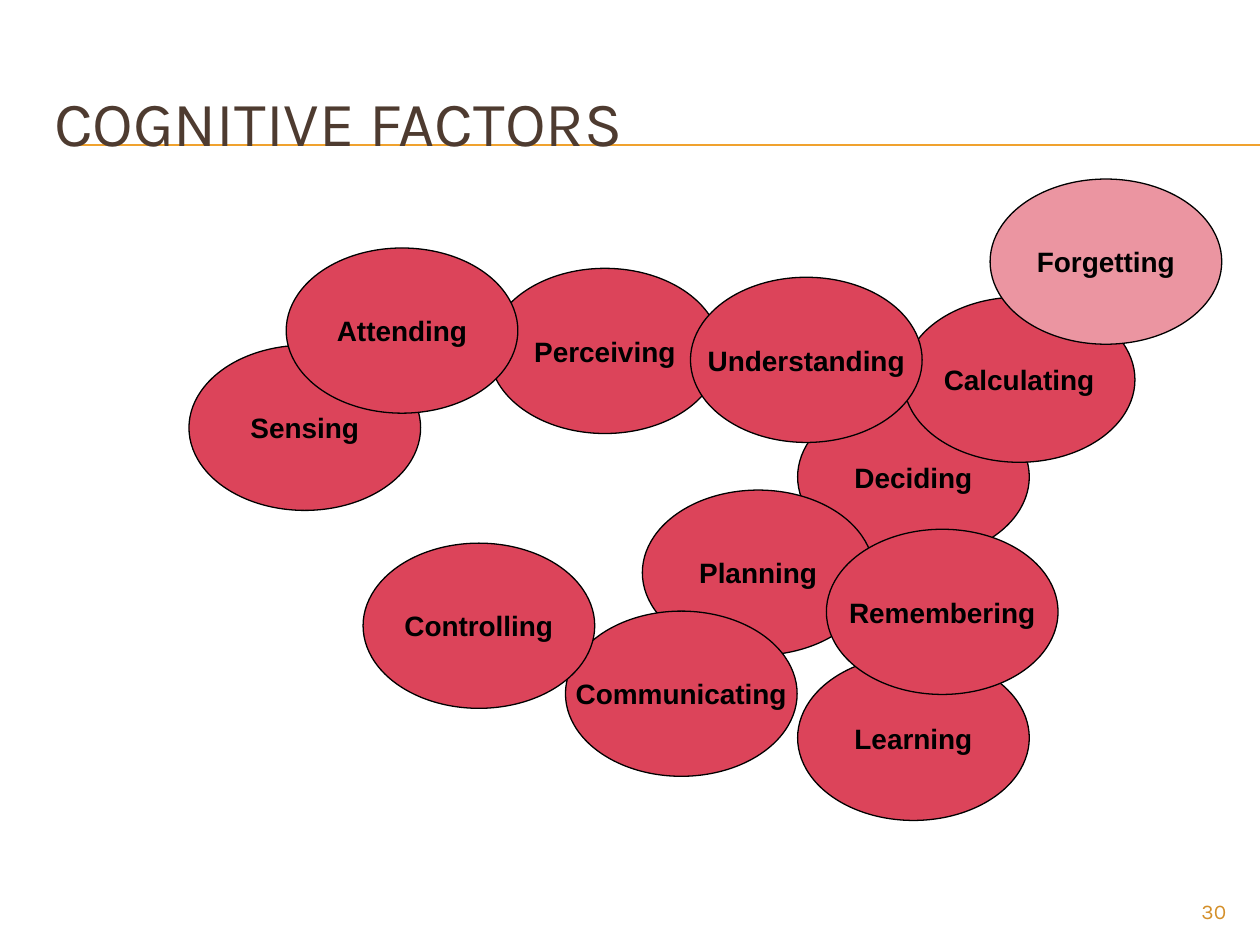
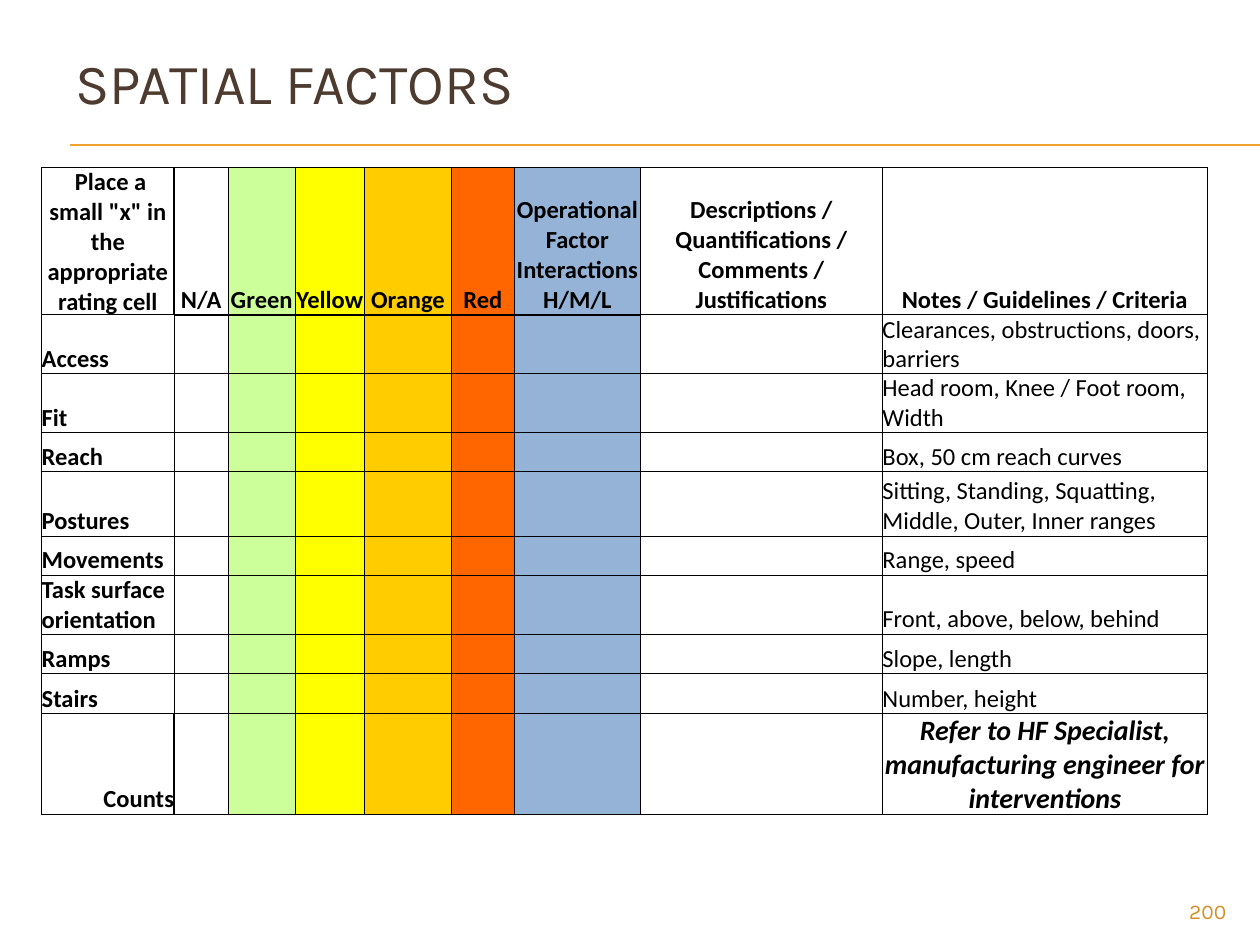
from lxml import etree
from pptx import Presentation
from pptx.dml.color import RGBColor
from pptx.enum.shapes import MSO_CONNECTOR, MSO_SHAPE
from pptx.enum.text import MSO_ANCHOR, PP_ALIGN
from pptx.oxml.ns import qn
from pptx.util import Cm, Pt

OVAL = MSO_SHAPE.OVAL
STRAIGHT = MSO_CONNECTOR.STRAIGHT
MIDDLE, BOTTOM = MSO_ANCHOR.MIDDLE, MSO_ANCHOR.BOTTOM
LEFT, CENTER, RIGHT = PP_ALIGN.LEFT, PP_ALIGN.CENTER, PP_ALIGN.RIGHT

BLACK = "000000"
RULE_GOLD = "F0A22E"
TITLE_BROWN = "4E3B30"
NUMBER_GOLD = "D48F29"
FACTOR_RED = "DC445A"
FORGETTING_PINK = "EB95A1"

FACTORS = [
    ("Sensing", 3.81, 6.96),
    ("Deciding", 16.08, 7.95),
    ("Learning", 16.08, 13.21),
    ("Planning", 12.95, 9.88),
    ("Perceiving", 9.86, 5.41),
    ("Attending", 5.77, 5),
    ("Communicating", 11.4, 12.32),
    ("Controlling", 7.32, 10.95),
    ("Calculating", 18.21, 5.99),
    ("Understanding", 13.92, 5.59),
    ("Remembering", 16.66, 10.67),
    ("Forgetting", 19.96, 3.61),
]

HEADINGS = [
    ' Place a small "x" in the appropriate rating cell',
    "N/A",
    "Green",
    "Yellow",
    "Orange",
    "Red",
    "Operational Factor Interactions H/M/L",
    "Descriptions / Quantifications / Comments / Justifications",
    "Notes / Guidelines / Criteria",
]
RATINGS = [
    ("Access", "Clearances, obstructions, doors, barriers"),
    ("Fit", "Head room, Knee / Foot room, Width"),
    ("Reach", "Box, 50 cm reach curves"),
    ("Postures", "Sitting, Standing, Squatting, Middle, Outer, Inner ranges"),
    ("Movements", "Range, speed"),
    ("Task surface orientation", "Front, above, below, behind"),
    ("Ramps", "Slope, length"),
    ("Stairs", "Number, height"),
    ("Counts", "Refer to HF Specialist, manufacturing engineer for interventions"),
]
COLUMN_WIDTHS = [2.67, 1.09, 1.35, 1.4, 1.75, 1.27, 2.54, 4.88, 6.55]
ROW_HEIGHTS = [2.59, 0.74, 0.79, 0.79, 1.3, 0.79, 0.79, 0.79, 0.81, 1.47]
COLUMN_FILLS = {2: "CCFF99", 3: "FFFF00", 4: "FFCC00", 5: "FF6600", 6: "95B3D7"}
COUNTS_ROW = len(RATINGS)
NOTES_COLUMN = len(HEADINGS) - 1
THICK_ROW_EDGES = {0: 6, 1: 6, COUNTS_ROW: 5, COUNTS_ROW + 1: 5}
THICK_COLUMN_EDGES = {0: (1, 6, 7), COUNTS_ROW: (1,)}


def color(hex_string):
    return RGBColor.from_string(hex_string)


def border_width(row, column, side):
    if side in "TB":
        edge = row + (side == "B")
        thick = 1 <= column <= THICK_ROW_EDGES.get(edge, 0)
    else:
        edge = column + (side == "R")
        thick = edge in THICK_COLUMN_EDGES.get(row, ())
    return Pt(1) if thick else Pt(0.5)


class Deck:
    def __init__(self):
        self.presentation = Presentation()
        self.presentation.slide_width = Cm(25.4)
        self.presentation.slide_height = Cm(19.05)
        self.slide = None

    def new_slide(self, number):
        layout = self.presentation.slide_layouts[6]
        self.slide = self.presentation.slides.add_slide(layout)
        for top in (2.92, 2.94):
            self.rule(1.42, 25.4, top)
        self.text(number, (22.86, 17.98, 2.11, 0.69), 12, NUMBER_GOLD, RIGHT)

    def format_runs(self, text_frame, font_name, size, hex_color, alignment,
                    bold=False, italic=False):
        for paragraph in text_frame.paragraphs:
            paragraph.alignment = alignment
            for run in paragraph.runs:
                run.font.name = font_name
                run.font.size = Pt(size)
                run.font.bold = bold
                run.font.italic = italic
                run.font.color.rgb = color(hex_color)

    def rule(self, left, right, top):
        connector = self.slide.shapes.add_connector(
            STRAIGHT, Cm(left), Cm(top), Cm(right), Cm(top))
        connector.line.color.rgb = color(RULE_GOLD)
        connector.line.width = Pt(0.75)
        properties = connector._element.spPr
        etree.SubElement(properties, qn("a:effectLst"))

    def text(self, text, box, size, hex_color, alignment=LEFT):
        shape = self.slide.shapes.add_textbox(*map(Cm, box))
        text_frame = shape.text_frame
        text_frame.word_wrap = True
        text_frame.text = text
        self.format_runs(text_frame, "Karla", size, hex_color, alignment)
        return text_frame

    def title(self, text, box, size):
        self.text(text, box, size, TITLE_BROWN).vertical_anchor = MIDDLE

    def factor(self, name, left, top, fill):
        shape = self.slide.shapes.add_shape(
            OVAL, Cm(left), Cm(top), Cm(4.67), Cm(3.33))
        shape.shadow.inherit = False
        shape.fill.solid()
        shape.fill.fore_color.rgb = color(fill)
        shape.line.color.rgb = color(BLACK)
        shape.line.width = Pt(0.75)
        text_frame = shape.text_frame
        text_frame.word_wrap = False
        text_frame.vertical_anchor = MIDDLE
        text_frame.text = name
        self.format_runs(text_frame, "Arial", 16, BLACK, CENTER, bold=True)

    def cell_borders(self, cell, row, column):
        properties = cell._tc.get_or_add_tcPr()
        for side in "LRTB":
            line = etree.SubElement(properties, qn(f"a:ln{side}"),
                                    w=str(border_width(row, column, side)))
            fill = etree.SubElement(line, qn("a:solidFill"))
            etree.SubElement(fill, qn("a:srgbClr"), val=BLACK)

    def cell(self, cell, row, column, text):
        self.cell_borders(cell, row, column)
        if column in COLUMN_FILLS:
            cell.fill.solid()
            cell.fill.fore_color.rgb = color(COLUMN_FILLS[column])
        else:
            cell.fill.background()
        cell.margin_left = cell.margin_right = 0
        cell.margin_top = cell.margin_bottom = 0
        cell.vertical_anchor = BOTTOM
        if not text:
            return
        cell.text_frame.text = text
        is_referral = row == COUNTS_ROW and column == NOTES_COLUMN
        if row == 0 or is_referral:
            alignment = CENTER
        else:
            alignment = RIGHT if row == COUNTS_ROW else LEFT
        self.format_runs(
            cell.text_frame, "Calibri", 16 if is_referral else 14, BLACK, alignment,
            bold=row == 0 or column == 0 or is_referral, italic=is_referral)

    def rating_table(self):
        blanks = [""] * (NOTES_COLUMN - 1)
        rows = [HEADINGS] + [[factor, *blanks, notes] for factor, notes in RATINGS]
        height = Cm(13.06)
        frame = self.slide.shapes.add_table(
            len(rows), len(HEADINGS), Cm(0.84), Cm(3.38), Cm(23.5), height)
        table = frame.table
        table.first_row = False
        table.horz_banding = False
        for column, width in zip(table.columns, COLUMN_WIDTHS):
            column.width = Cm(width)
        for row, row_height in zip(table.rows, ROW_HEIGHTS):
            row.height = Cm(row_height)
        frame.height = height
        for row, texts in enumerate(rows):
            for column, text in enumerate(texts):
                self.cell(table.cell(row, column), row, column, text)


def main():
    deck = Deck()

    deck.new_slide("30")
    deck.title("COGNITIVE FACTORS", (0.84, 1.27, 24.13, 2.34), 36)
    for name, left, top in FACTORS:
        fill = FORGETTING_PINK if name == "Forgetting" else FACTOR_RED
        deck.factor(name, left, top, fill)

    deck.new_slide("200")
    deck.rating_table()
    deck.title("SPATIAL FACTORS", (1.27, 0.76, 22.86, 1.78), 32.4)

    deck.presentation.save("out.pptx")


if __name__ == "__main__":
    main()
